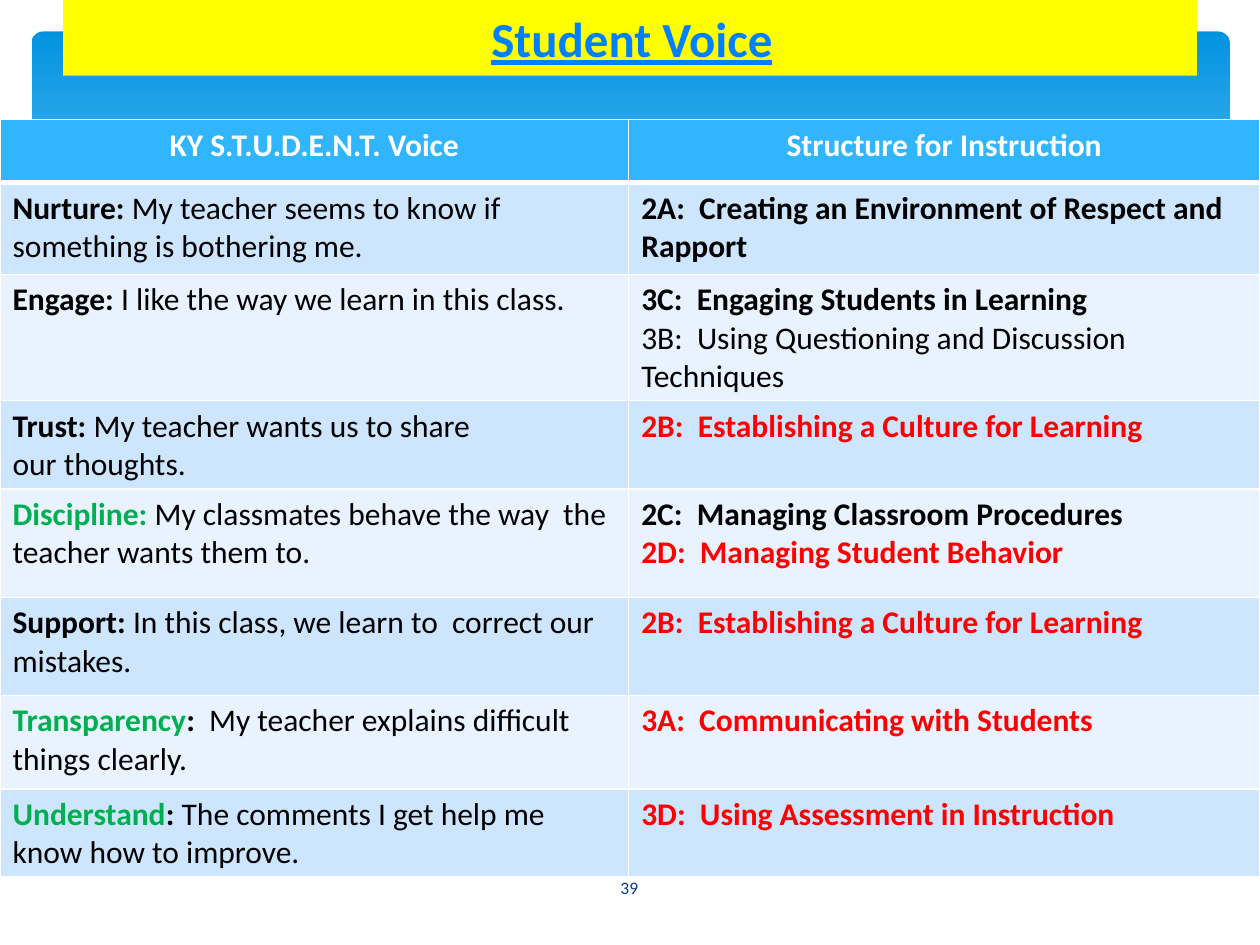
"""Build the Student Voice slide with its crosswalk table."""
from lxml import etree
from pptx import Presentation
from pptx.dml.color import RGBColor
from pptx.enum.shapes import MSO_SHAPE
from pptx.enum.text import MSO_ANCHOR, PP_ALIGN
from pptx.oxml.ns import qn
from pptx.util import Inches, Pt

ROUND = MSO_SHAPE.ROUNDED_RECTANGLE
MIDDLE = MSO_ANCHOR.MIDDLE
CENTER = PP_ALIGN.CENTER
BLACK, RED, GREEN, WHITE = "000000", "FF0000", "00B050", "FFFFFF"


def color(code):
    return RGBColor.from_string(code)


def write(para, text, code, **looks):
    run = para.add_run()
    run.text = text
    run.font.color.rgb = color(code)
    for name, value in {"name": "Calibri", **looks}.items():
        setattr(run.font, name, value)


deck = Presentation()
deck.slide_width, deck.slide_height = Inches(10), Inches(7.5)
slide = deck.slides.add_slide(deck.slide_layouts[5])
shapes = slide.shapes

band = shapes.add_shape(ROUND, Inches(0.25), Inches(0.25), Inches(9.51), Inches(2.7))
band.shadow.inherit = False
band.adjustments[0] = 0.034
band.line.fill.background()
band.fill.gradient()
band.fill.gradient_angle = 270
for stop, (spot, code) in zip(band.fill.gradient_stops, [(0, "0293E0"), (0.9, "83D3FE")]):
    stop.position = spot
    stop.color.rgb = color(code)

title = shapes.title
title.left, title.top, title.width, title.height = Inches(0.5), Inches(0), Inches(9), Inches(0.6)
title.fill.solid()
title.fill.fore_color.rgb = color("FFFF00")
frame = title.text_frame
frame.vertical_anchor = MIDDLE
frame.margin_left = Inches(0.13)
frame.paragraphs[0].alignment = CENTER
write(frame.paragraphs[0], "Student Voice", "0080FF", size=Pt(28), bold=True, underline=True)
band.element.addnext(title.element)

number = shapes.add_textbox(Inches(4.36), Inches(6.84), Inches(1.27), Inches(0.4))
frame = number.text_frame
frame.word_wrap = True
frame.vertical_anchor = MIDDLE
frame.paragraphs[0].alignment = CENTER
write(frame.paragraphs[0], "39", "073E87", size=Pt(10))

culture = [[("2B:  Establishing a Culture for Learning", RED, True)]]
rows = [
    (0.5, [[("KY S.T.U.D.E.N.T. Voice", WHITE, True)]],
     [[("Structure for Instruction", WHITE, True)]]),
    (0.73, [[("Nurture: ", BLACK, True), ("My teacher seems to know if", BLACK, False)],
            [("something is bothering me.", BLACK, False)]],
     [[("2A:  Creating an Environment of Respect and Rapport", BLACK, True)]]),
    (0.97, [[("Engage: ", BLACK, True), ("I like the way we learn in this class.", BLACK, False)]],
     [[("3C:  Engaging Students in Learning", BLACK, True)],
      [("3B:  Using Questioning and Discussion Techniques", BLACK, False)]]),
    (0.64, [[("Trust: ", BLACK, True), ("My teacher wants us to share", BLACK, False)],
            [("our thoughts.", BLACK, False)]],
     culture),
    (0.86, [[("Discipline: ", GREEN, True),
             ("My classmates behave the way  the teacher wants them to.", BLACK, False)]],
     [[("2C:  Managing Classroom Procedures", BLACK, True)],
      [("2D:  Managing Student Behavior", RED, True)]]),
    (0.78, [[("Support: ", BLACK, True),
             ("In this class, we learn to  correct our mistakes.", BLACK, False)]],
     culture),
    (0.74, [[("Transparency", GREEN, True), (":  ", BLACK, True),
             ("My teacher explains difficult things clearly.", BLACK, False)]],
     [[("3A:  Communicating with Students", RED, True)]]),
    (0.68, [[("Understand", GREEN, True), (": ", BLACK, True),
             ("The comments I get help me", BLACK, False)],
            [("know how to improve.", BLACK, False)]],
     [[("3D:  Using Assessment in Instruction", RED, True)]]),
]

total = sum(row[0] for row in rows)
table = shapes.add_table(len(rows), 2, Inches(0), Inches(0.95), Inches(10), Inches(total)).table
for col, width in zip(table.columns, (4.99, 5.01)):
    col.width = Inches(width)

for r, (height, *cells) in enumerate(rows):
    table.rows[r].height = Inches(height)
    shade = "31B6FD" if r == 0 else ("E8F3FF", "CEE5FE")[r % 2]
    for c, paras in enumerate(cells):
        cell = table.cell(r, c)
        props = cell._tc.get_or_add_tcPr()
        for side in "LRTB":
            thick = 3 if (r, side) in ((0, "B"), (1, "T")) else 1
            edge = etree.SubElement(props, qn("a:ln" + side), w=str(Pt(thick)))
            fill = etree.SubElement(edge, qn("a:solidFill"))
            etree.SubElement(fill, qn("a:srgbClr"), val=WHITE)
        cell.fill.solid()
        cell.fill.fore_color.rgb = color(shade)
        frame = cell.text_frame
        for i, runs in enumerate(paras):
            para = frame.add_paragraph() if i else frame.paragraphs[0]
            if r == 0:
                para.alignment = CENTER
            for text, code, bold in runs:
                write(para, text, code, size=Pt(18), bold=bold)

deck.save("out.pptx")
